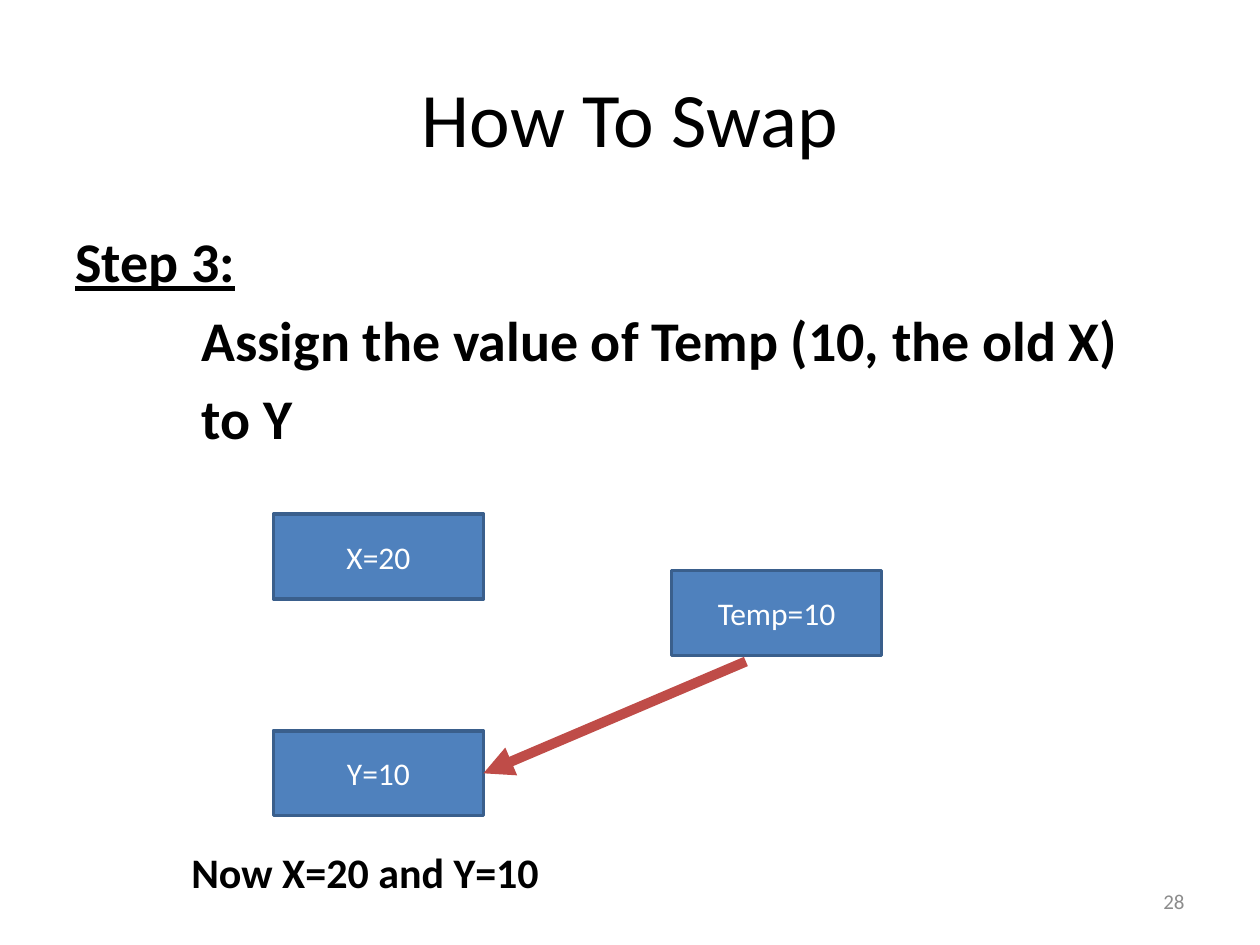
import pptx
import pptx.dml.color
import pptx.enum.shapes
import pptx.enum.text
import pptx.oxml
import pptx.oxml.ns
import pptx.util

INCH = pptx.util.Inches
ALIGN = pptx.enum.text.PP_ALIGN
ANCHOR = pptx.enum.text.MSO_ANCHOR
WIDE, HIGH = 10, 7.5
BOX_W, BOX_H = WIDE / 6, HIGH * 0.09
COLORS = {
    "ink": "000000",
    "white": "FFFFFF",
    "page": "8C8C8C",
    "box": "4F81BD",
    "edge": "3A5F8C",
    "arrow": "BF4C48",
}


def tint(name):
    return pptx.dml.color.RGBColor.from_string(COLORS[name])


def write(frame, text, size=18, color="ink", bold=False, line=False,
          align=ALIGN.LEFT, anchor=ANCHOR.TOP, indent=0, before=0, more=False):
    """Put one paragraph in a frame; more=True adds it below the others."""
    frame.word_wrap = True
    frame.vertical_anchor = anchor
    para = frame.add_paragraph() if more else frame.paragraphs[0]
    para.alignment = align
    para.space_before = pptx.util.Pt(before)
    para._p.get_or_add_pPr().set("marL", str(INCH(indent)))
    run = para.add_run()
    run.text = text
    font = run.font
    font.name, font.size = "Calibri", pptx.util.Pt(size)
    font.bold, font.underline = bold, line
    font.color.rgb = tint(color)


def add_text(slide, left, top, width, height):
    area = [INCH(v) for v in (left, top, width, height)]
    return slide.shapes.add_textbox(*area).text_frame


def add_box(slide, text, left, top):
    rect = pptx.enum.shapes.MSO_SHAPE.RECTANGLE
    box = slide.shapes.add_shape(
        rect, INCH(left), INCH(top), INCH(BOX_W), INCH(BOX_H))
    box.shadow.inherit = False
    box.fill.solid()
    box.fill.fore_color.rgb = tint("box")
    box.line.color.rgb = tint("edge")
    box.line.width = pptx.util.Pt(2)
    write(box.text_frame, text, color="white",
          align=ALIGN.CENTER, anchor=ANCHOR.MIDDLE)
    return box


def add_arrow(slide, left, top, goal):
    """Draw an arrow from a point to the right side of the goal box."""
    kind = pptx.enum.shapes.MSO_CONNECTOR.STRAIGHT
    start = INCH(left), INCH(top)
    arrow = slide.shapes.add_connector(kind, *start, *start)
    arrow.end_connect(goal, 3)
    arrow.line.color.rgb = tint("arrow")
    arrow.line.width = pptx.util.Pt(5.75)
    space = pptx.oxml.ns.nsdecls("a")
    tail = pptx.oxml.parse_xml(f'<a:tailEnd {space} type="triangle"/>')
    arrow.line._get_or_add_ln().append(tail)
    blank = pptx.oxml.parse_xml(f"<a:effectLst {space}/>")
    arrow._element.spPr.append(blank)


def main():
    deck = pptx.Presentation()
    deck.slide_width, deck.slide_height = INCH(WIDE), INCH(HIGH)
    slide = deck.slides.add_slide(deck.slide_layouts[6])
    edge = WIDE * 0.05
    span = WIDE - 2 * edge

    write(add_text(slide, edge, HIGH * 0.04, span, HIGH / 6), "How To Swap",
          size=44, align=ALIGN.CENTER, anchor=ANCHOR.MIDDLE)
    write(add_text(slide, WIDE - edge - 2.33, 6.95, 2.33, 0.4), "28", size=12,
          color="page", align=ALIGN.RIGHT, anchor=ANCHOR.MIDDLE)

    step = add_text(slide, edge, 1.75, span, 1.93)
    look = {"size": 32, "bold": True, "before": 6.4}
    write(step, "Step 3:", line=True, **look)
    for text in ("Assign the value of Temp (10, the old X)", "to Y"):
        write(step, text, indent=1, more=True, **look)

    left, right = 2.17, 5.33
    add_box(slide, "X=20", left, 4.08)
    add_box(slide, "Temp=10", right, 4.53)
    goal = add_box(slide, "Y=10", left, 5.8)
    add_arrow(slide, 5.92, HIGH * 0.7, goal)

    write(add_text(slide, 1.42, 6.67, 6.17, 0.5), "Now X=20 and Y=10",
          size=24, bold=True)
    deck.save("out.pptx")


if __name__ == "__main__":
    main()
